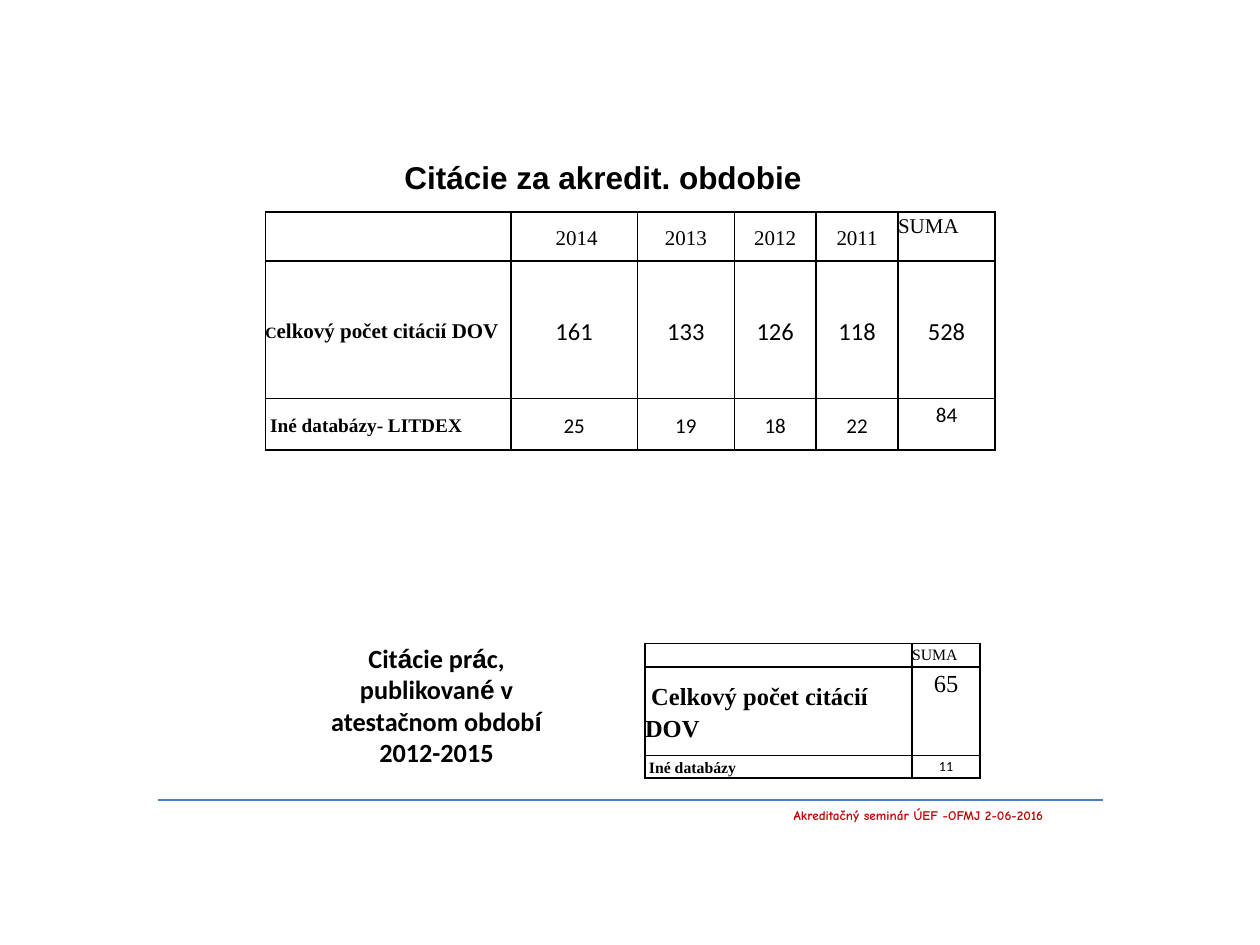
"""Builds a slide of citation counts with two bordered tables."""
from dataclasses import dataclass

from lxml import etree
from pptx import Presentation
from pptx.dml.color import RGBColor
from pptx.enum.shapes import MSO_CONNECTOR
from pptx.enum.text import MSO_ANCHOR, MSO_AUTO_SIZE, PP_ALIGN
from pptx.oxml.ns import qn
from pptx.util import Pt

LEFT, CENTER = PP_ALIGN.LEFT, PP_ALIGN.CENTER
TOP, MIDDLE = MSO_ANCHOR.TOP, MSO_ANCHOR.MIDDLE
NO_FIT = MSO_AUTO_SIZE.NONE
STRAIGHT = MSO_CONNECTOR.STRAIGHT
COLORS = {"ink": "000000", "rule": "4B7EBC", "footer": "C00000"}
SERIF, SANS, HEADING, HAND = "Times New Roman", "Calibri", "Arial", "Comic Neue"


@dataclass
class Entry:
    """Holds the text and format of one table cell."""
    text: str = ""
    size: float = 9
    face: str = SERIF
    bold: bool = False
    align: int = CENTER
    anchor: int = MIDDLE
    lead: str = ""


class Slide:
    """Holds the style and the current page, and adds elements to it."""

    def __init__(self, page):
        self.page = page

    def color(self, name):
        return RGBColor.from_string(COLORS[name])

    def style(self, para, size, face, bold, align, color="ink"):
        para.alignment = align
        font = para.font
        font.size, font.name, font.bold = Pt(size), face, bold
        font.color.rgb = self.color(color)

    def frame(self, box, anchor, wrap):
        frame = box.text_frame
        frame.auto_size = NO_FIT
        frame.word_wrap = wrap
        frame.vertical_anchor = anchor
        return frame.paragraphs[0]

    def title(self, text, place, size):
        box = self.page.shapes.title
        box.left, box.top, box.width, box.height = map(Pt, place)
        para = self.frame(box, MIDDLE, False)
        para.text = text
        self.style(para, size, HEADING, True, LEFT)

    def text(self, spans, place, size, face, anchor, wrap, color="ink"):
        box = self.page.shapes.add_textbox(*map(Pt, place))
        para = self.frame(box, anchor, wrap)
        self.style(para, size, face, True, CENTER, color)
        for number, text in enumerate(spans):
            span = para.add_run()
            span.text = text
            if number % 2:
                span.font.name = HEADING

    def line(self, start, end, width):
        rule = self.page.shapes.add_connector(STRAIGHT, *map(Pt, start + end))
        rule.line.color.rgb = self.color("rule")
        rule.line.width = Pt(width)
        etree.SubElement(rule._element.spPr, qn("a:effectLst"))

    def borders(self, cell):
        properties = cell._tc.get_or_add_tcPr()
        for side in ("lnL", "lnR", "lnT", "lnB"):
            edge = etree.SubElement(properties, qn(f"a:{side}"), w=str(Pt(1)))
            fill = etree.SubElement(edge, qn("a:solidFill"))
            etree.SubElement(fill, qn("a:srgbClr"), val=COLORS["ink"])

    def cell(self, cell, entry):
        self.borders(cell)
        cell.fill.background()
        cell.margin_left = cell.margin_right = 0
        cell.margin_top = cell.margin_bottom = 0
        cell.vertical_anchor = entry.anchor
        para = cell.text_frame.paragraphs[0]
        para.line_spacing = 1.15
        self.style(para, entry.size, entry.face, entry.bold, entry.align)
        if entry.lead:
            span = para.add_run()
            span.text = entry.lead
            span.font.size = Pt(9)
        if entry.text:
            para.add_run().text = entry.text
        else:
            para._p.get_or_add_endParaRPr().set("sz", str(entry.size * 100))

    def table(self, entries, left, top, widths, heights):
        grid = self.page.shapes.add_table(
            len(heights), len(widths), Pt(left), Pt(top),
            Pt(sum(widths)), Pt(sum(heights))).table
        grid.first_row = grid.horz_banding = False
        for column, width in zip(grid.columns, widths):
            column.width = Pt(width)
        for row, height, line in zip(grid.rows, heights, entries):
            row.height = Pt(height)
            for cell, entry in zip(row.cells, line):
                self.cell(cell, entry)


def main():
    deck = Presentation()
    deck.slide_width, deck.slide_height = Pt(720), Pt(540)
    slide = Slide(deck.slides.add_slide(deck.slide_layouts[5]))
    slide.title("Citácie za akredit. obdobie", (223.9, 86.8, 244, 29), 18)

    years = [Entry(year, 12) for year in (" 2014", "2013", "2012", "2011")]
    totals = [Entry(count, 14, SANS) for count in ("161", "133", "126", "118", "528")]
    others = [Entry(count, 12, SANS) for count in ("25", "19", "18", "22")]
    slide.table([
        [Entry(), *years, Entry("SUMA", 12, align=LEFT, anchor=TOP)],
        [Entry("elkový počet citácií DOV", 12, bold=True, align=LEFT, lead="C"), *totals],
        [Entry(" Iné databázy- LITDEX", 11, bold=True, align=LEFT), *others,
         Entry("84", 12, SANS, anchor=TOP)],
    ], 151.6, 121, (140.4, 72.2, 55.4, 46.8, 46.8, 55.4), (28.2, 78.5, 29.4))

    slide.table([
        [Entry(), Entry("SUMA", align=LEFT, anchor=TOP)],
        [Entry(" Celkový počet citácií DOV", 14, bold=True, align=LEFT),
         Entry("65", 14, anchor=TOP)],
        [Entry(" Iné databázy", bold=True, align=LEFT), Entry("11", 8, SANS, anchor=TOP)],
    ], 368.6, 367.7, (152.6, 38.9), (13.5, 50.4, 12.9))

    slide.line((90, 457.2), (630, 457.2), 0.75)
    caption = ["Cit", "á", "cie pr", "á", "c, publikovan", "é",
               " v atestačnom obdob", "í", " 2012-2015"]
    slide.text(caption, (181.4, 362.9, 136.1, 79.9), 15, SANS, MIDDLE, True)
    slide.text(["Akreditačný seminár ÚEF -OFMJ 2-06-2016"],
               (433.4, 457.9, 182.9, 16.6), 7.5, HAND, TOP, False, "footer")
    deck.save("out.pptx")


if __name__ == "__main__":
    main()
